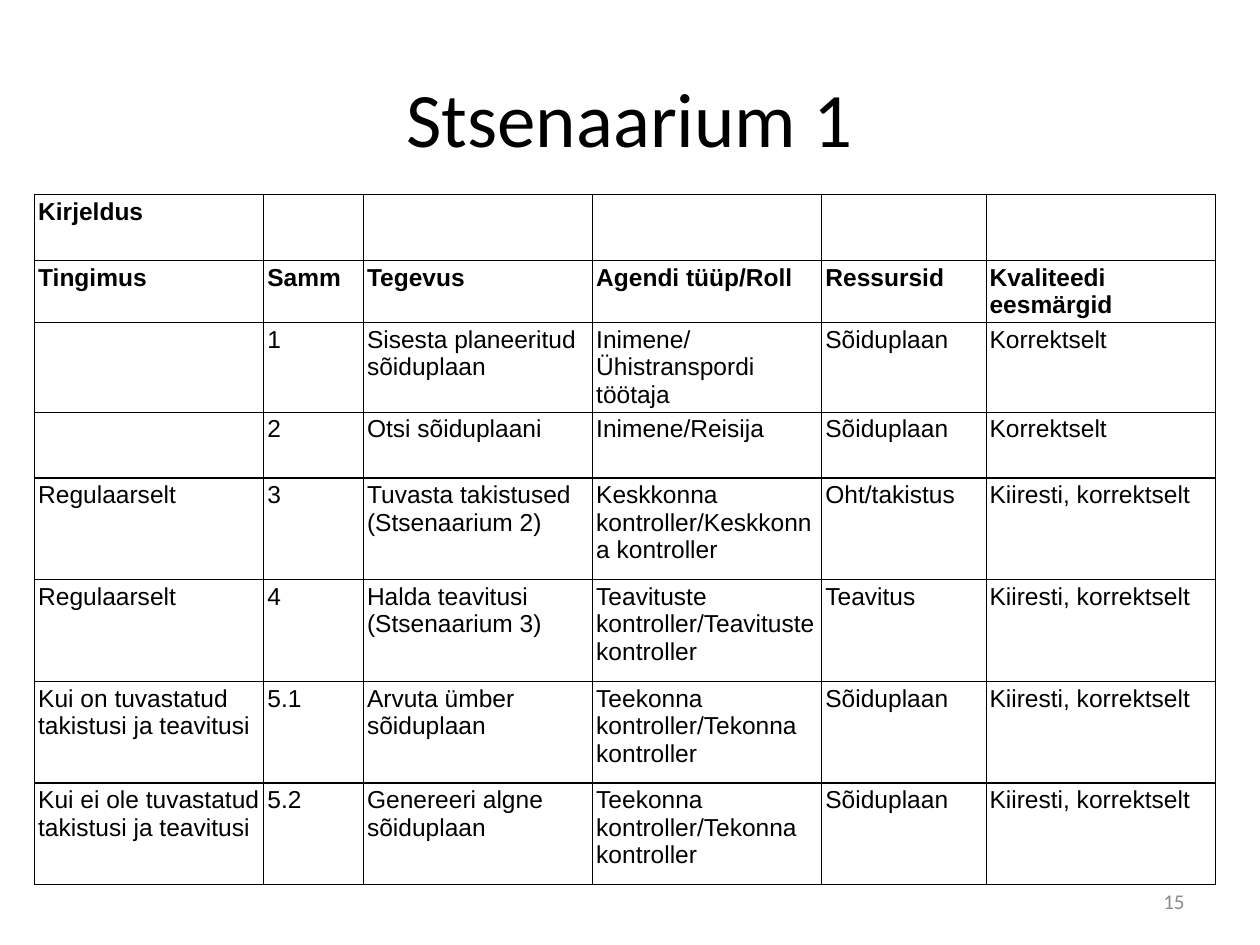
import pptx
import pptx.util
import pptx.dml.color
import pptx.enum.text
import pptx.oxml
import pptx.oxml.ns
from pptx.util import Cm

BLACK = "000000"
GREY = "8C8C8C"
ALIGN = pptx.enum.text.PP_ALIGN
MIDDLE = pptx.enum.text.MSO_ANCHOR.MIDDLE

COL_WIDTHS = [4.62, 2.01, 4.62, 4.62, 3.31, 4.62]
ROW_HEIGHTS = [1.33, 1.25, 1.8, 1.33] + [2.05] * 4
HEADER_ROWS = 2
ROWS = [
    ["Kirjeldus", "", "", "", "", ""],
    ["Tingimus", "Samm", "Tegevus", "Agendi tüüp/Roll", "Ressursid",
     "Kvaliteedi eesmärgid"],
    ["", "1", "Sisesta planeeritud sõiduplaan",
     "Inimene/Ühistranspordi töötaja", "Sõiduplaan", "Korrektselt"],
    ["", "2", "Otsi sõiduplaani", "Inimene/Reisija", "Sõiduplaan",
     "Korrektselt"],
    ["Regulaarselt", "3", "Tuvasta takistused (Stsenaarium 2)",
     "Keskkonna kontroller/Keskkonna kontroller", "Oht/takistus",
     "Kiiresti, korrektselt"],
    ["Regulaarselt", "4", "Halda teavitusi (Stsenaarium 3)",
     "Teavituste kontroller/Teavituste kontroller", "Teavitus",
     "Kiiresti, korrektselt"],
    ["Kui on tuvastatud takistusi ja teavitusi", "5.1",
     "Arvuta ümber sõiduplaan", "Teekonna kontroller/Tekonna kontroller",
     "Sõiduplaan", "Kiiresti, korrektselt"],
    ["Kui ei ole tuvastatud takistusi ja teavitusi", "5.2",
     "Genereeri algne sõiduplaan", "Teekonna kontroller/Tekonna kontroller",
     "Sõiduplaan", "Kiiresti, korrektselt"],
]


def rgb(color):
    return pptx.dml.color.RGBColor.from_string(color)


def set_attrs(obj, values):
    for name, value in values.items():
        setattr(obj, name, value)


def write(tf, text, size, font, color=BLACK, align=None, bold=False):
    """Fill a text frame with one formatted run."""
    p = tf.paragraphs[0]
    p.alignment = align
    r = p.add_run()
    r.text = text
    set_attrs(r.font, {"size": pptx.util.Pt(size), "name": font, "bold": bold})
    r.font.color.rgb = rgb(color)


def set_borders(cell, color=BLACK, width=0.75):
    tcPr = cell._tc.get_or_add_tcPr()
    for side in ("lnL", "lnR", "lnT", "lnB"):
        tcPr.append(pptx.oxml.parse_xml(
            f'<a:{side} {pptx.oxml.ns.nsdecls("a")} w="{pptx.util.Pt(width)}">'
            f'<a:solidFill><a:srgbClr val="{color}"/></a:solidFill>'
            f'</a:{side}>'))


def add_title(slide, text):
    sp = slide.shapes.title
    set_attrs(sp, {"left": Cm(1.27), "top": Cm(0.76),
                   "width": Cm(22.86), "height": Cm(3.18)})
    sp.text_frame.vertical_anchor = MIDDLE
    write(sp.text_frame, text, 44, "Calibri", align=ALIGN.CENTER)


def add_scenario_table(slide):
    table = slide.shapes.add_table(
        len(ROWS), len(COL_WIDTHS), Cm(0.7), Cm(3.92),
        Cm(sum(COL_WIDTHS)), Cm(sum(ROW_HEIGHTS))).table
    set_attrs(table, {"first_row": False, "horz_banding": False})
    for col, width in zip(table.columns, COL_WIDTHS):
        col.width = Cm(width)
    margins = {f"margin_{side}": Cm(0.07)
               for side in ("left", "right", "top", "bottom")}
    for i, (row, height) in enumerate(zip(table.rows, ROW_HEIGHTS)):
        row.height = Cm(height)
        for cell, text in zip(row.cells, ROWS[i]):
            set_attrs(cell, margins)
            set_borders(cell)
            cell.fill.background()
            if text:
                write(cell.text_frame, text, 14, "Arial", bold=i < HEADER_ROWS)


def add_page_number(slide, text):
    sp = slide.shapes.add_textbox(Cm(18.2), Cm(17.65), Cm(5.93), Cm(1.02))
    set_attrs(sp.text_frame, {"word_wrap": True, "vertical_anchor": MIDDLE})
    write(sp.text_frame, text, 12, "Calibri", GREY, ALIGN.RIGHT)


def main():
    prs = pptx.Presentation()
    set_attrs(prs, {"slide_width": Cm(25.4), "slide_height": Cm(19.05)})
    slide = prs.slides.add_slide(prs.slide_layouts[5])  # title only
    add_title(slide, "Stsenaarium 1")
    add_scenario_table(slide)
    add_page_number(slide, "15")
    prs.save("out.pptx")


if __name__ == "__main__":
    main()
